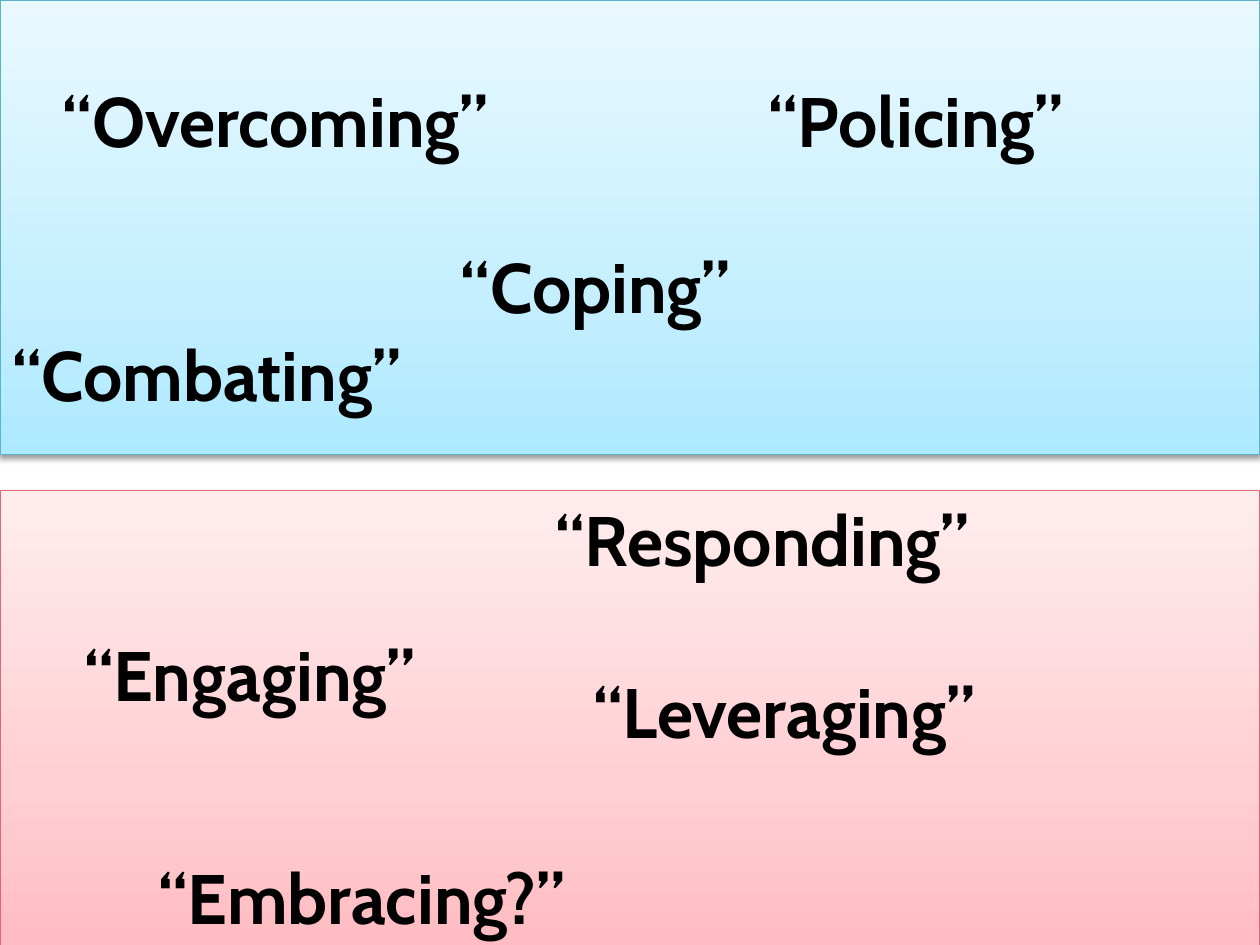
from copy import deepcopy

from lxml import etree
from pptx import Presentation
from pptx.dml.color import RGBColor
from pptx.enum.shapes import MSO_SHAPE
from pptx.enum.text import MSO_AUTO_SIZE
from pptx.oxml.ns import qn
from pptx.util import Inches, Pt

RECTANGLE = MSO_SHAPE.RECTANGLE
GROW_TO_FIT = MSO_AUTO_SIZE.SHAPE_TO_FIT_TEXT
BLANK_LAYOUT = 6

SLIDE_WIDTH, SLIDE_HEIGHT = 10, 7.5
PANEL_HEIGHT = 3.61
STOP_POSITIONS = (0, 0.35, 1)

# top, gradient colours from bottom to top, outline
PANELS = [
    (SLIDE_HEIGHT - PANEL_HEIGHT, ("FFBCC2", "FFCFD3", "FFEDEE"), "E46778"),
    (0, ("ADE9FF", "C5EFFF", "E9F9FF"), "5BB3CA"),
]

# left, top, wording
WORDS = [
    (0.4, 0.57, "“Overcoming”"),
    (3.56, 1.88, "“Coping”"),
    (0.57, 4.96, "“Engaging”"),
    (4.61, 5.26, "“Leveraging”"),
    (0, 2.58, "“Combating”"),
    (1.16, 6.73, "“Embracing?”"),
    (4.31, 3.89, "“Responding”"),
    (6, 0.57, "“Policing”"),
]


def color(hex_value):
    return RGBColor.from_string(hex_value)


def set_gradient(shape, colors):
    """Fill the shape with three colours running from bottom to top."""
    fill = shape.fill
    fill.gradient()
    fill.gradient_angle = 90
    stop_list = next(shape._element.spPr.iter(qn("a:gsLst")))
    stop_list.append(deepcopy(stop_list[-1]))
    for stop, position, hex_value in zip(fill.gradient_stops, STOP_POSITIONS, colors):
        stop.position = position
        stop.color.rgb = color(hex_value)


def add_soft_shadow(shape):
    shape.shadow.inherit = False
    effects = shape._element.spPr.find(qn("a:effectLst"))
    shadow = etree.SubElement(
        effects, qn("a:outerShdw"), blurRad=str(Pt(3.5)), dist=str(Pt(2)),
        dir="5400000", rotWithShape="0")
    shadow_color = etree.SubElement(shadow, qn("a:srgbClr"), val="000000")
    etree.SubElement(shadow_color, qn("a:alpha"), val="38000")


def add_panel(slide, top, colors, outline):
    panel = slide.shapes.add_shape(
        RECTANGLE, Inches(0), Inches(top), Inches(SLIDE_WIDTH), Inches(PANEL_HEIGHT))
    set_gradient(panel, colors)
    panel.line.color.rgb = color(outline)
    panel.line.width = Pt(0.5)
    add_soft_shadow(panel)


def add_text(slide, text, left, top, width=6, height=0.77, size=40,
             font="Cabin", hex_value="000000", bold=True):
    box = slide.shapes.add_textbox(
        Inches(left), Inches(top), Inches(width), Inches(height))
    frame = box.text_frame
    frame.word_wrap = True
    frame.auto_size = GROW_TO_FIT
    run = frame.paragraphs[0].add_run()
    run.text = text
    run.font.name = font
    run.font.size = Pt(size)
    run.font.bold = bold
    run.font.color.rgb = color(hex_value)


def main():
    presentation = Presentation()
    presentation.slide_width = Inches(SLIDE_WIDTH)
    presentation.slide_height = Inches(SLIDE_HEIGHT)
    slide = presentation.slides.add_slide(presentation.slide_layouts[BLANK_LAYOUT])
    for top, colors, outline in PANELS:
        add_panel(slide, top, colors, outline)
    for left, top, word in WORDS:
        add_text(slide, word, left, top)
    presentation.save("out.pptx")


if __name__ == "__main__":
    main()
